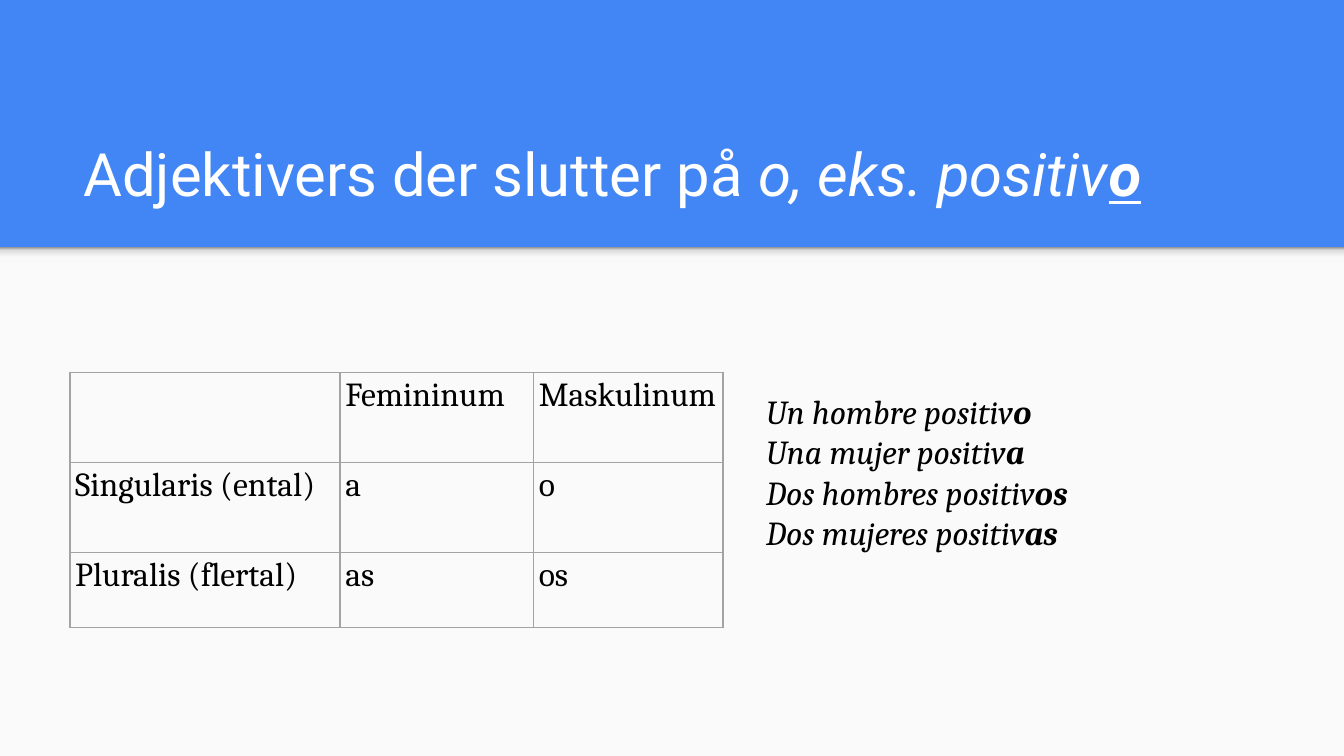
from lxml.etree import SubElement
from pptx import Presentation
from pptx.dml.color import RGBColor
from pptx.enum.shapes import MSO_SHAPE
from pptx.enum.text import MSO_ANCHOR, MSO_AUTO_SIZE, PP_ALIGN
from pptx.oxml.ns import qn
from pptx.util import Pt


def color(hex_string):
    return RGBColor.from_string(hex_string)


def add_runs(paragraph, texts, font_name, size, hex_string):
    """Add one run per text and return the runs."""
    paragraph.alignment = PP_ALIGN.LEFT
    paragraph.line_spacing = 1.0
    paragraph.space_before = Pt(0)
    runs = []
    for text in texts:
        run = paragraph.add_run()
        run.text = text
        run.font.name = font_name
        run.font.size = Pt(size)
        run.font.color.rgb = color(hex_string)
        runs.append(run)
    return runs


presentation = Presentation()
presentation.slide_width = Pt(720)
presentation.slide_height = Pt(405)
slide = presentation.slides.add_slide(presentation.slide_layouts[1])
slide.background.fill.solid()
slide.background.fill.fore_color.rgb = color("4285F4")

# Light content area with a soft shadow along its top edge
band_top = 132.5
panel = slide.shapes.add_shape(MSO_SHAPE.RECTANGLE, Pt(0), Pt(band_top), Pt(720), Pt(405 - band_top))
panel.fill.solid()
panel.fill.fore_color.rgb = color("FAFAFA")
edge = slide.shapes.add_shape(MSO_SHAPE.RECTANGLE, Pt(0), Pt(band_top), Pt(720), Pt(8.6))
edge.fill.gradient()
edge.fill.gradient_angle = 90
stop_list = edge.fill._xPr.find(qn("a:gradFill")).find(qn("a:gsLst"))
for stop in list(stop_list):
    stop_list.remove(stop)
for percent, hex_string in [(0, "F9F9F9"), (36, "F9F9F9"), (80, "DEDEDE"), (100, "999999")]:
    stop = SubElement(stop_list, qn("a:gs"), pos=str(percent * 1000))
    SubElement(stop, qn("a:srgbClr"), val=hex_string)
for shape in (panel, edge):
    shape.line.fill.background()
    shape.shadow.inherit = False

# Title and examples, brought in front of the panel
title = slide.shapes.title
body = slide.placeholders[1]
for placeholder, box, anchor in [
    (title, (37.4, 58.3, 647.3, 60.5), MSO_ANCHOR.BOTTOM),
    (body, (403.2, 202.3, 281.5, 162), MSO_ANCHOR.TOP),
]:
    slide.shapes._spTree.append(placeholder._element)
    placeholder.left, placeholder.top, placeholder.width, placeholder.height = map(Pt, box)
    frame = placeholder.text_frame
    frame.margin_left = frame.margin_right = frame.margin_top = frame.margin_bottom = Pt(7.2)
    frame.word_wrap = True
    frame.auto_size = MSO_AUTO_SIZE.NONE
    frame.vertical_anchor = anchor

title_texts = ["Adjektivers der slutter på ", "o, eks. positiv", "o"]
title_runs = add_runs(title.text_frame.paragraphs[0], title_texts, "Roboto", 32, "FFFFFF")
for run in title_runs[1:]:
    run.font.italic = True
title_runs[-1].font.bold = True
title_runs[-1].font.underline = True

examples = [
    ("Un hombre positiv", "o"),
    ("Una mujer positiv", "a"),
    ("Dos hombres positiv", "os"),
    ("Dos mujeres positiv", "as"),
]
for index, example in enumerate(examples):
    frame = body.text_frame
    paragraph = frame.add_paragraph() if index else frame.paragraphs[0]
    properties = paragraph._p.get_or_add_pPr()
    properties.set("marL", "0")
    properties.set("indent", "0")
    SubElement(properties, qn("a:buNone"))
    stem, ending = add_runs(paragraph, example, "Cambria", 18, "000000")
    stem.font.italic = ending.font.italic = True
    ending.font.bold = True

# Table of endings
rows = [
    ["", "Femininum", "Maskulinum"],
    ["Singularis (ental)", "a", "o"],
    ["Pluralis (flertal)", "as", "os"],
]
column_widths = [144.7, 103.7, 101.5]
row_heights = [48.2, 48.2, 40.3]
table = slide.shapes.add_table(
    3, 3, Pt(37.4), Pt(199.6), Pt(sum(column_widths)), Pt(sum(row_heights))
).table
table.first_row = False
table.horz_banding = False
for column, width in zip(table.columns, column_widths):
    column.width = Pt(width)
for row, height, texts in zip(table.rows, row_heights, rows):
    row.height = Pt(height)
    for cell, text in zip(row.cells, texts):
        cell.margin_left = cell.margin_right = Pt(2.9)
        cell.margin_top = cell.margin_bottom = Pt(2)
        cell.vertical_anchor = MSO_ANCHOR.TOP
        if text:
            add_runs(cell.text_frame.paragraphs[0], [text], "Cambria", 18, "000000")
        properties = cell._tc.get_or_add_tcPr()
        for side in ("lnL", "lnR", "lnT", "lnB"):
            border = SubElement(properties, qn(f"a:{side}"), w=str(Pt(1)))
            fill = SubElement(border, qn("a:solidFill"))
            SubElement(fill, qn("a:srgbClr"), val="A3A3A3")
        cell.fill.background()

presentation.save("out.pptx")
